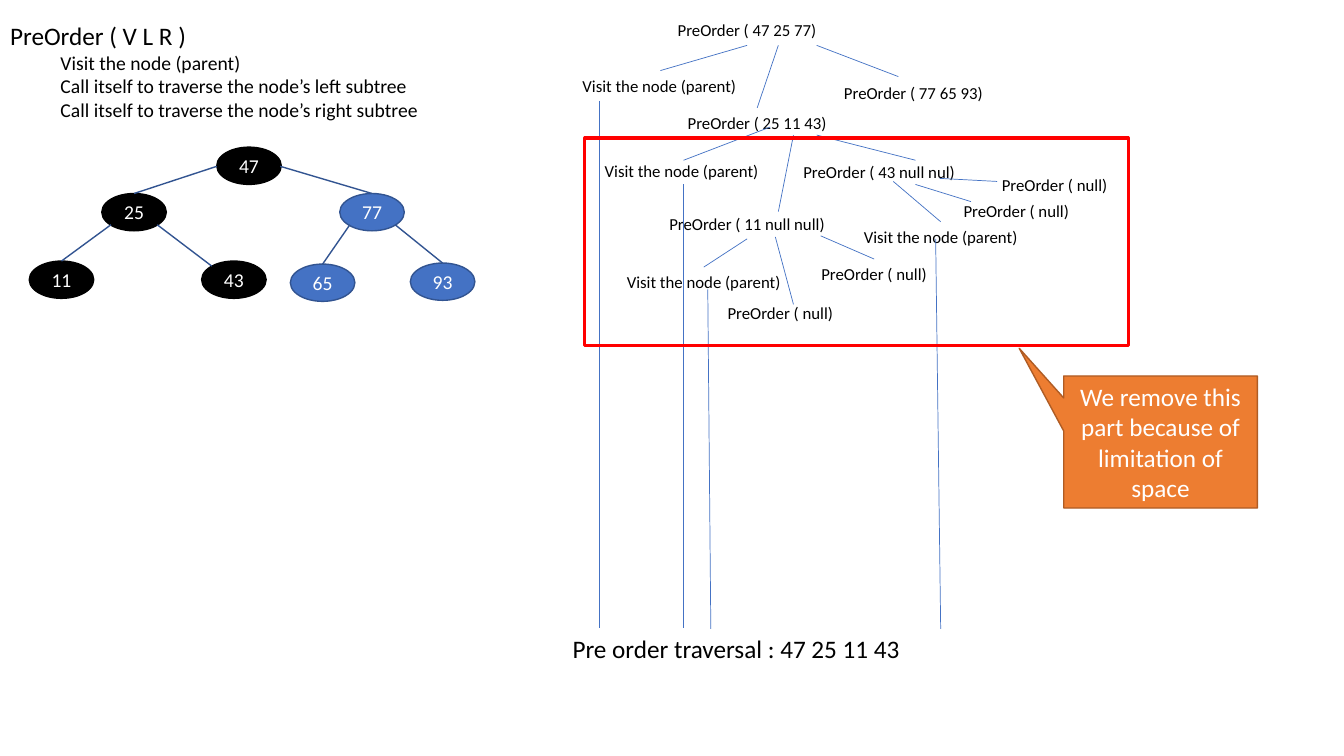
from lxml import etree
from pptx import Presentation
from pptx import util as u
from pptx.dml.color import RGBColor
from pptx.enum import shapes, text
from pptx.oxml.ns import qn

PX = 9144
FONT = "Calibri"
COLORS = {"black": "000000", "white": "FFFFFF", "blue": "4472C4", "navy": "325491",
          "red": "FF0000", "orange": "ED7D31", "rust": "AF5C24"}
VISIT = "Visit the node (parent)"
NULL = "PreOrder ( null)"

STEPS = ["PreOrder ( V L R )", VISIT,
         "Call itself to traverse the node’s left subtree",
         "Call itself to traverse the node’s right subtree"]

NODES = [("47", 215, 146, "black"), ("25", 101, 192, "black"), ("43", 200, 259, "black"),
         ("77", 337, 192, "blue"), ("11", 29, 259, "black"), ("65", 288, 262, "blue"),
         ("93", 407, 261, "blue")]

TOP_EDGES = [("25", 215, 165), ("77", 278, 165), ("11", 110, 223),
             ("65", 347, 223), ("93", 392, 223)]

CALLS = [("PreOrder ( 47 25 77)", 624, 15, 234), (VISIT, 558, 70, 192),
         ("PreOrder ( 25 11 43)", 655, 107, 192), ("PreOrder ( 77 65 93)", 810, 77, 192),
         (VISIT, 580, 155, 192), ("PreOrder ( 11 null null)", 645, 207, 192),
         ("PreOrder ( 43 null nul)", 776, 156, 192), (VISIT, 602, 265, 192),
         (NULL, 678, 295, 192), (NULL, 771, 257, 192), (VISIT, 837, 220, 192),
         (NULL, 912, 194, 192), (NULL, 950, 168, 192)]

CALL_LINES = [(741, 45, 655, 70), (772, 45, 751, 107), (810, 45, 891, 76),
              (764, 126, 678, 159), (787, 134, 772, 210), (810, 134, 908, 159),
              (741, 237, 698, 265), (769, 235, 787, 302), (814, 234, 867, 257),
              (886, 180, 933, 220), (908, 183, 963, 200), (932, 177, 989, 180)]

OUTPUT_LINES = [(594, 100, 594, 623), (678, 183, 678, 623),
                (702, 287, 705, 624), (928, 237, 933, 624)]


def px(*values):
    """Turn px lengths into EMU."""
    return [u.Emu(v * PX) for v in values]


def rgb(name):
    """Look up a named colour."""
    return RGBColor.from_string(COLORS[name])


def format_paragraph(p, size, color, align):
    """Align a paragraph and set the font of its runs."""
    p.alignment = align
    for r in p.runs:
        r.font.size, r.font.name = u.Pt(size), FONT
        r.font.color.rgb = rgb(color)


def add_label(s, words, box, size=12, align=text.PP_ALIGN.CENTER):
    """Add a wrapped one-line text box."""
    tf = s.shapes.add_textbox(*px(*box)).text_frame
    tf.word_wrap = True
    tf.text = words
    format_paragraph(tf.paragraphs[0], size, "black", align)


def add_box(s, kind, box, fill, line, width=1, words="", size=14):
    """Add a preset shape, filled or hollow, with optional centred text."""
    sp = s.shapes.add_shape(kind, *px(*box))
    sp.shadow.inherit = False
    if fill:
        sp.fill.solid()
        sp.fill.fore_color.rgb = rgb(fill)
    else:
        sp.fill.background()
    sp.line.color.rgb = rgb(line)
    sp.line.width = u.Pt(width)
    if words:
        tf = sp.text_frame
        tf.word_wrap = True
        tf.vertical_anchor = text.MSO_ANCHOR.MIDDLE
        tf.text = words
        format_paragraph(tf.paragraphs[0], size, "white", text.PP_ALIGN.CENTER)
    return sp


def add_node(s, value, x, y, fill):
    """Add one tree node."""
    line = "navy" if fill == "blue" else fill
    sp = add_box(s, shapes.MSO_SHAPE.OVAL, (x, y, 64, 37), fill, line, words=value)
    tf = sp.text_frame
    tf.margin_left = tf.margin_right = tf.margin_top = tf.margin_bottom = 0
    return sp


def add_line(s, ends, color="blue", width=0.5):
    """Add a straight connector without a shadow."""
    cx = s.shapes.add_connector(shapes.MSO_CONNECTOR.STRAIGHT, *px(*ends))
    cx.line.color.rgb = rgb(color)
    cx.line.width = u.Pt(width)
    etree.SubElement(cx._element.spPr, qn("a:effectLst"))
    return cx


def fill_steps(sp):
    """Place the body placeholder and write the algorithm steps in it."""
    sp.left, sp.top, sp.width, sp.height = px(0, 15, 436, 111)
    tf = sp.text_frame
    tf.auto_size = text.MSO_AUTO_SIZE.NONE
    tf.vertical_anchor = text.MSO_ANCHOR.TOP
    tf.text = "\n".join(STEPS)
    for i, p in enumerate(tf.paragraphs):
        p.level = min(i, 1)
        p.space_before = p.space_after = u.Pt(0)
        p.line_spacing = 1.0
        format_paragraph(p, 14 if i else 18, "black", text.PP_ALIGN.LEFT)
        pPr = p._p.get_or_add_pPr()
        pPr.set("marL", str(50 * PX * p.level))
        pPr.set("indent", "0")
        etree.SubElement(pPr, qn("a:buNone"))


def add_tree(s):
    """Draw the binary search tree."""
    nodes = {node[0]: add_node(s, *node) for node in NODES}
    for child, x, y in TOP_EDGES:
        add_line(s, (x, y, x, y), "navy", 1).end_connect(nodes[child], 0)
    add_line(s, (156, 223, 210, 264), "navy", 1)


def main():
    """Build the slide."""
    prs = Presentation()
    prs.slide_width, prs.slide_height = px(1333, 750)
    s = prs.slides.add_slide(prs.slide_layouts[1])
    title = s.shapes.title._element
    title.getparent().remove(title)
    fill_steps(s.placeholders[1])
    add_tree(s)
    for words, *box in CALLS:
        add_label(s, words, (*box, 30))
    for ends in CALL_LINES + OUTPUT_LINES:
        add_line(s, ends)
    add_label(s, "Pre order traversal : 47 25 11 43", (558, 623, 512, 40), 18,
              text.PP_ALIGN.LEFT)
    add_box(s, shapes.MSO_SHAPE.RECTANGLE, (580, 137, 539, 206), None, "red", 2.25)
    callout = add_box(s, shapes.MSO_SHAPE.RECTANGULAR_CALLOUT, (1055, 373, 192, 131),
                      "orange", "rust", 1,
                      "We remove this part because of limitation of space", 18)
    callout.adjustments[0] = -0.73
    callout.adjustments[1] = -0.71
    prs.save("out.pptx")


if __name__ == "__main__":
    main()
